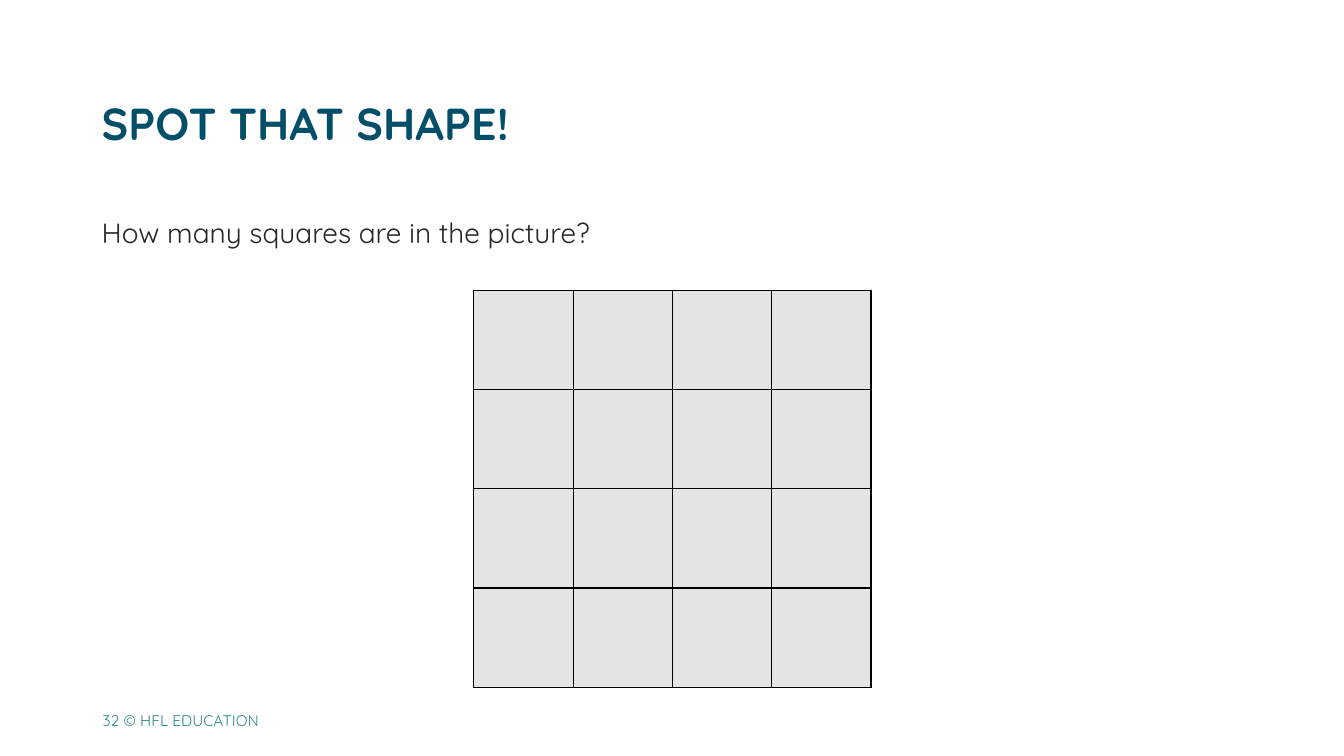
from dataclasses import dataclass

from lxml.etree import SubElement
from pptx import Presentation
from pptx.dml.color import RGBColor
from pptx.enum.text import MSO_ANCHOR
from pptx.oxml.ns import qn
from pptx.util import Inches, Pt


@dataclass(frozen=True)
class Theme:
    font: str = "Quicksand"
    title_color: str = "034E69"
    body_color: str = "262626"
    footer_color: str = "2F8989"
    cell_fill: str = "E4E4E4"
    border: str = "000000"
    title_size: int = 32
    body_size: int = 20
    footer_size: int = 11
    border_width: int = 1


THEME = Theme()


def add_text(slide, text, box, size, color, bold=False, anchor=MSO_ANCHOR.MIDDLE):
    tf = slide.shapes.add_textbox(*map(Inches, box)).text_frame
    tf.word_wrap = True
    tf.vertical_anchor = anchor
    p = tf.paragraphs[0]
    p.text = text
    p.font.name = THEME.font
    p.font.size = Pt(size)
    p.font.bold = bold
    p.font.color.rgb = RGBColor.from_string(color)


def set_borders(cell):
    """Draw all four cell borders; they must precede the fill in tcPr."""
    tcPr = cell._tc.get_or_add_tcPr()
    for side in ("lnL", "lnR", "lnT", "lnB"):
        ln = SubElement(tcPr, qn(f"a:{side}"), w=str(Pt(THEME.border_width)))
        fill = SubElement(ln, qn("a:solidFill"))
        SubElement(fill, qn("a:srgbClr"), val=THEME.border)


def add_square_grid(slide, left, top, side, count):
    """Add a table of count by count equal squares."""
    frame = slide.shapes.add_table(
        count, count, Inches(left), Inches(top), Inches(side), Inches(side))
    table = frame.table
    table.first_row = False
    table.horz_banding = False
    for column in table.columns:
        column.width = Inches(side / count)
    for row in table.rows:
        row.height = Inches(side / count)
    for cell in table.iter_cells():
        set_borders(cell)
        cell.fill.solid()
        cell.fill.fore_color.rgb = RGBColor.from_string(THEME.cell_fill)


def main():
    prs = Presentation()
    prs.slide_width = Inches(13.33)
    prs.slide_height = Inches(7.5)
    slide = prs.slides.add_slide(prs.slide_layouts[6])

    add_text(slide, "32 © HFL EDUCATION", (0.92, 6.95, 2.75, 0.4),
             THEME.footer_size, THEME.footer_color)
    add_text(slide, "SPOT THAT SHAPE!", (0.91, 0.59, 9.84, 1.26),
             THEME.title_size, THEME.title_color, bold=True)
    add_text(slide, "How many squares are in the picture?", (0.91, 2.09, 9.84, 4.13),
             THEME.body_size, THEME.body_color, anchor=MSO_ANCHOR.TOP)
    add_square_grid(slide, left=4.7, top=2.88, side=3.94, count=4)

    prs.save("out.pptx")


if __name__ == "__main__":
    main()
